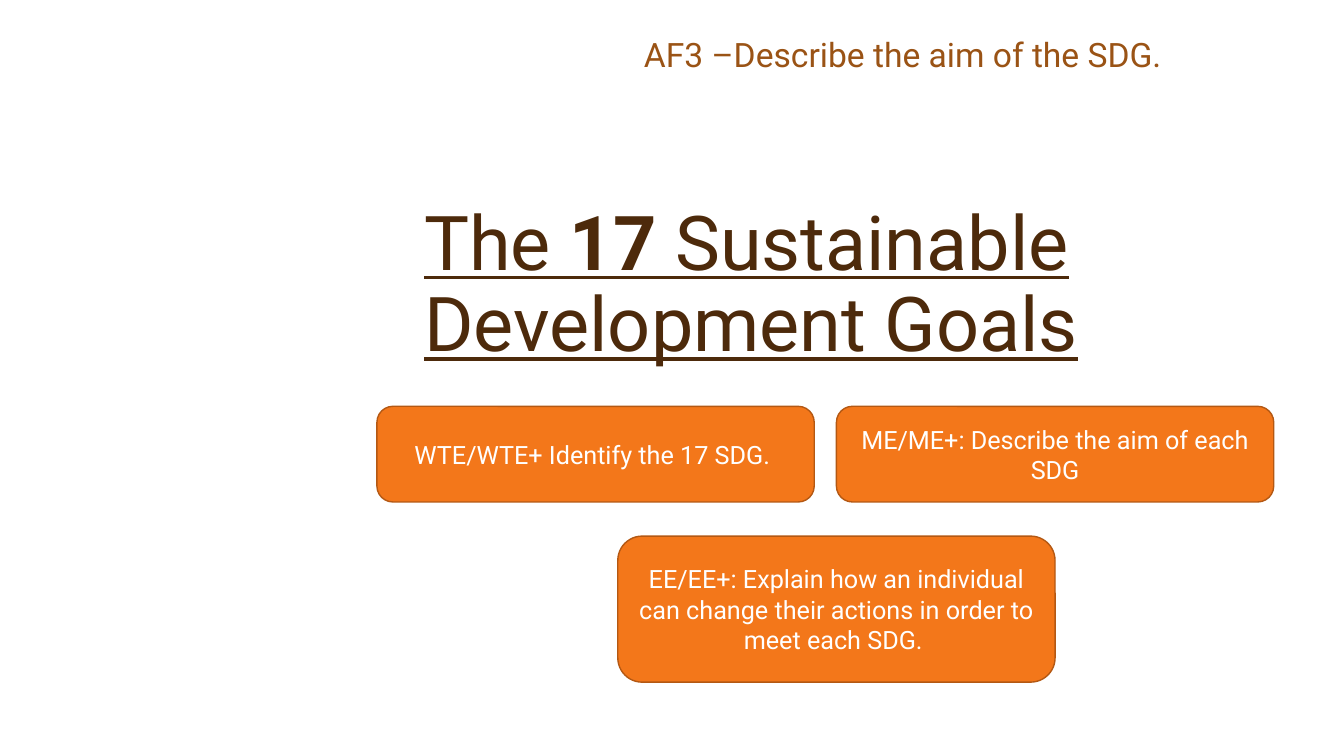
"""Build the title slide on the 17 Sustainable Development Goals."""
import dataclasses

import pptx
import pptx.dml.color
import pptx.enum.shapes
import pptx.enum.text
import pptx.shapes.base
import pptx.slide
import pptx.text.text
import pptx.util

Cm = pptx.util.Cm
COLOURS = {
    "title": "4D2A0B",
    "subtitle": "9A5315",
    "card": "F3771A",
    "card_line": "B45813",
    "card_text": "FFFFFF",
}
FONT_NAME = "Roboto"
CARD_WIDTH = 11.02


@dataclasses.dataclass(frozen=True)
class Card:
    text: str
    left: float
    top: float
    height: float


CARDS = [
    Card("WTE/WTE+ Identify the 17 SDG. ", 9.5, 10.24, 2.41),
    Card("ME/ME+: Describe the aim of each SDG", 21.08, 10.24, 2.41),
    Card(
        "EE/EE+: Explain how an individual can change their actions in order to meet each SDG. ",
        15.57, 13.51, 3.68,
    ),
]


def colour(name: str) -> pptx.dml.color.RGBColor:
    return pptx.dml.color.RGBColor.from_string(COLOURS[name])


def format_runs(paragraph: pptx.text.text._Paragraph, size: int, colour_name: str) -> None:
    for run in paragraph.runs:
        run.font.name = FONT_NAME
        run.font.size = pptx.util.Pt(size)
        run.font.color.rgb = colour(colour_name)


def add_text_box(
    slide: pptx.slide.Slide, left: float, top: float, width: float, height: float
) -> pptx.text.text.TextFrame:
    shape = slide.shapes.add_textbox(Cm(left), Cm(top), Cm(width), Cm(height))
    shape.text_frame.word_wrap = True
    return shape.text_frame


def add_title(slide: pptx.slide.Slide) -> None:
    text_frame = add_text_box(slide, 10.44, 3.71, 21.29, 5.69)
    text_frame.vertical_anchor = pptx.enum.text.MSO_ANCHOR.BOTTOM
    paragraph = text_frame.paragraphs[0]
    paragraph.line_spacing = 0.9
    for text, bold in [("The ", False), ("17", True), (" Sustainable Development Goals", False)]:
        run = paragraph.add_run()
        run.text = text
        run.font.bold = bold
        run.font.underline = True
    format_runs(paragraph, 54, "title")


def add_subtitle(slide: pptx.slide.Slide) -> None:
    text_frame = add_text_box(slide, 15.98, 0.74, 19.05, 2.54)
    text_frame.text = "AF3 –Describe the aim of the SDG."
    format_runs(text_frame.paragraphs[0], 24, "subtitle")


def add_card(slide: pptx.slide.Slide, card: Card) -> None:
    shape = slide.shapes.add_shape(
        pptx.enum.shapes.MSO_SHAPE.ROUNDED_RECTANGLE,
        Cm(card.left), Cm(card.top), Cm(CARD_WIDTH), Cm(card.height),
    )
    shape.shadow.inherit = False
    shape.fill.solid()
    shape.fill.fore_color.rgb = colour("card")
    shape.line.color.rgb = colour("card_line")
    shape.line.width = pptx.util.Pt(1)
    text_frame = shape.text_frame
    text_frame.word_wrap = True
    text_frame.vertical_anchor = pptx.enum.text.MSO_ANCHOR.MIDDLE
    text_frame.text = card.text
    paragraph = text_frame.paragraphs[0]
    paragraph.alignment = pptx.enum.text.PP_ALIGN.CENTER
    format_runs(paragraph, 18, "card_text")


def main() -> None:
    presentation = pptx.Presentation()
    presentation.slide_width = Cm(33.87)
    presentation.slide_height = Cm(19.05)
    slide = presentation.slides.add_slide(presentation.slide_layouts[6])
    add_title(slide)
    add_subtitle(slide)
    for card in CARDS:
        add_card(slide, card)
    presentation.save("out.pptx")


if __name__ == "__main__":
    main()
